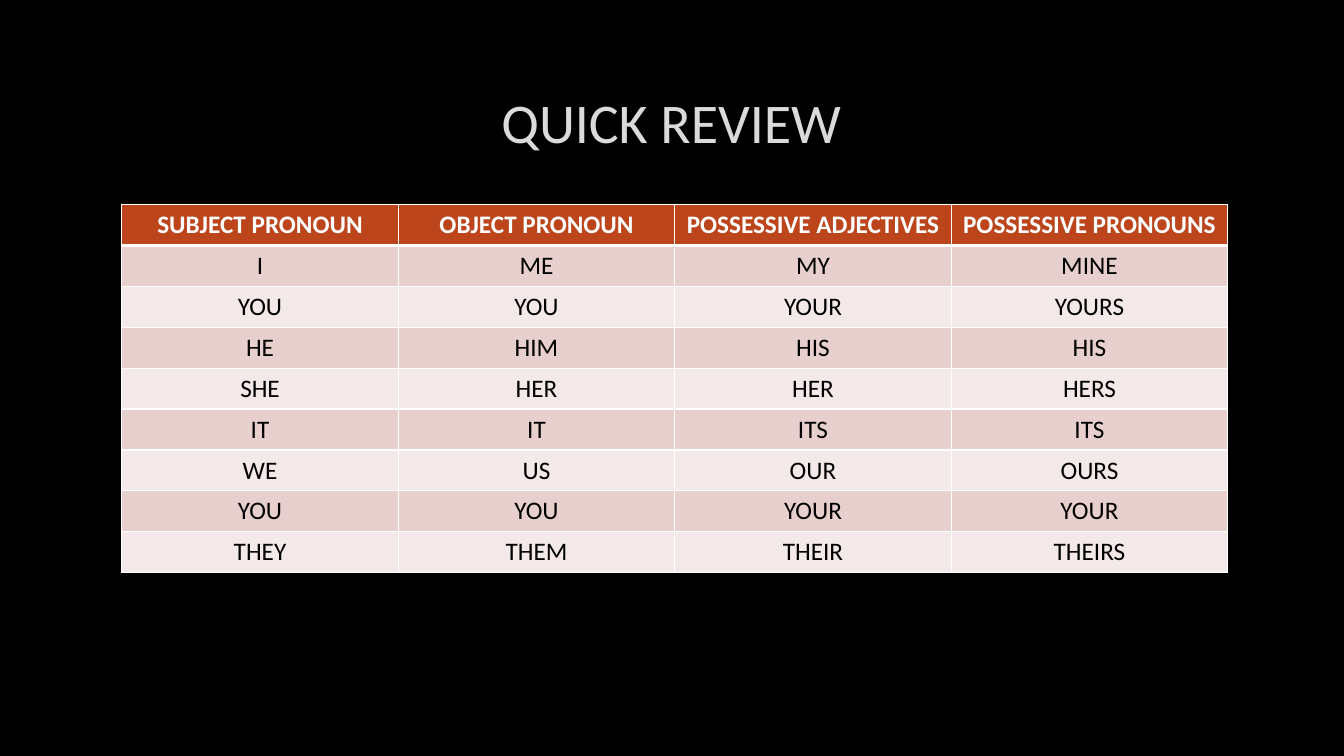
from pptx import Presentation
from pptx import util as u
from pptx.dml.color import RGBColor
from pptx.enum import text
from pptx.oxml import parse_xml

NS = 'xmlns:a="http://schemas.openxmlformats.org/drawingml/2006/main"'
FONT = "Calibri"
HEAD, ODD, EVEN = "BC451B", "E7CFCD", "F3E9E8"
ROWS = [
    ("SUBJECT PRONOUN", "OBJECT PRONOUN", "POSSESSIVE ADJECTIVES", "POSSESSIVE PRONOUNS"),
    ("I", "ME", "MY", "MINE"),
    ("YOU", "YOU", "YOUR", "YOURS"),
    ("HE", "HIM", "HIS", "HIS"),
    ("SHE", "HER", "HER", "HERS"),
    ("IT", "IT", "ITS", "ITS"),
    ("WE", "US", "OUR", "OURS"),
    ("YOU", "YOU", "YOUR", "YOUR"),
    ("THEY", "THEM", "THEIR", "THEIRS"),
]


def paint(fill, color):
    fill.solid()
    fill.fore_color.rgb = RGBColor.from_string(color)


def write(frame, words, size, color, bold=False):
    para = frame.paragraphs[0]
    para.alignment = text.PP_ALIGN.CENTER
    run = para.add_run()
    run.text = words
    run.font.name, run.font.size, run.font.bold = FONT, u.Pt(size), bold
    paint(run.font.fill, color)
    return run


def line(tag, width, color, alpha=100):
    return parse_xml(
        f'<a:{tag} {NS} w="{u.Pt(width)}"><a:solidFill><a:srgbClr val="{color}">'
        f'<a:alpha val="{alpha * 1000}"/></a:srgbClr></a:solidFill></a:{tag}>')


def title(slide, x, y, w, h):
    shape = slide.shapes.title
    shape.left, shape.top, shape.width, shape.height = map(u.Pt, (x, y, w, h))
    shape.text_frame.vertical_anchor = text.MSO_ANCHOR.MIDDLE
    run = write(shape.text_frame, "QUICK REVIEW", 40, "DADADA")
    # Faint outline around the letters
    run.font._element.insert(0, line("ln", 0.75, "404040", 10))


def edge(cell, row):
    # The rule under the header is thicker than the grid
    sizes = {"lnL": 1, "lnR": 1, "lnT": 3 if row == 1 else 1, "lnB": 3 if row == 0 else 1}
    props = cell._tc.get_or_add_tcPr()
    for i, (tag, width) in enumerate(sizes.items()):
        props.insert(i, line(tag, width, "FFFFFF"))


def grid(slide, x, y, w, h):
    count, wide = len(ROWS), len(ROWS[0])
    table = slide.shapes.add_table(count, wide, *map(u.Pt, (x, y, w, h))).table
    for col in table.columns:
        col.width = u.Pt(w / wide)
    for r, words in enumerate(ROWS):
        table.rows[r].height = u.Pt(h / count)
        head = r == 0
        for c, word in enumerate(words):
            cell = table.cell(r, c)
            cell.vertical_anchor = text.MSO_ANCHOR.MIDDLE
            paint(cell.fill, HEAD if head else ODD if r % 2 else EVEN)
            edge(cell, r)
            write(cell.text_frame, word, 18, "FFFFFF" if head else "000000", head)


def main():
    deck = Presentation()
    deck.slide_width, deck.slide_height = u.Pt(960), u.Pt(540)
    slide = deck.slides.add_slide(deck.slide_layouts[5])
    paint(slide.background.fill, "000000")
    title(slide, 72, 48, 815, 76.5)
    grid(slide, 87, 146.2, 790, 262.8)
    deck.save("out.pptx")


if __name__ == "__main__":
    main()
